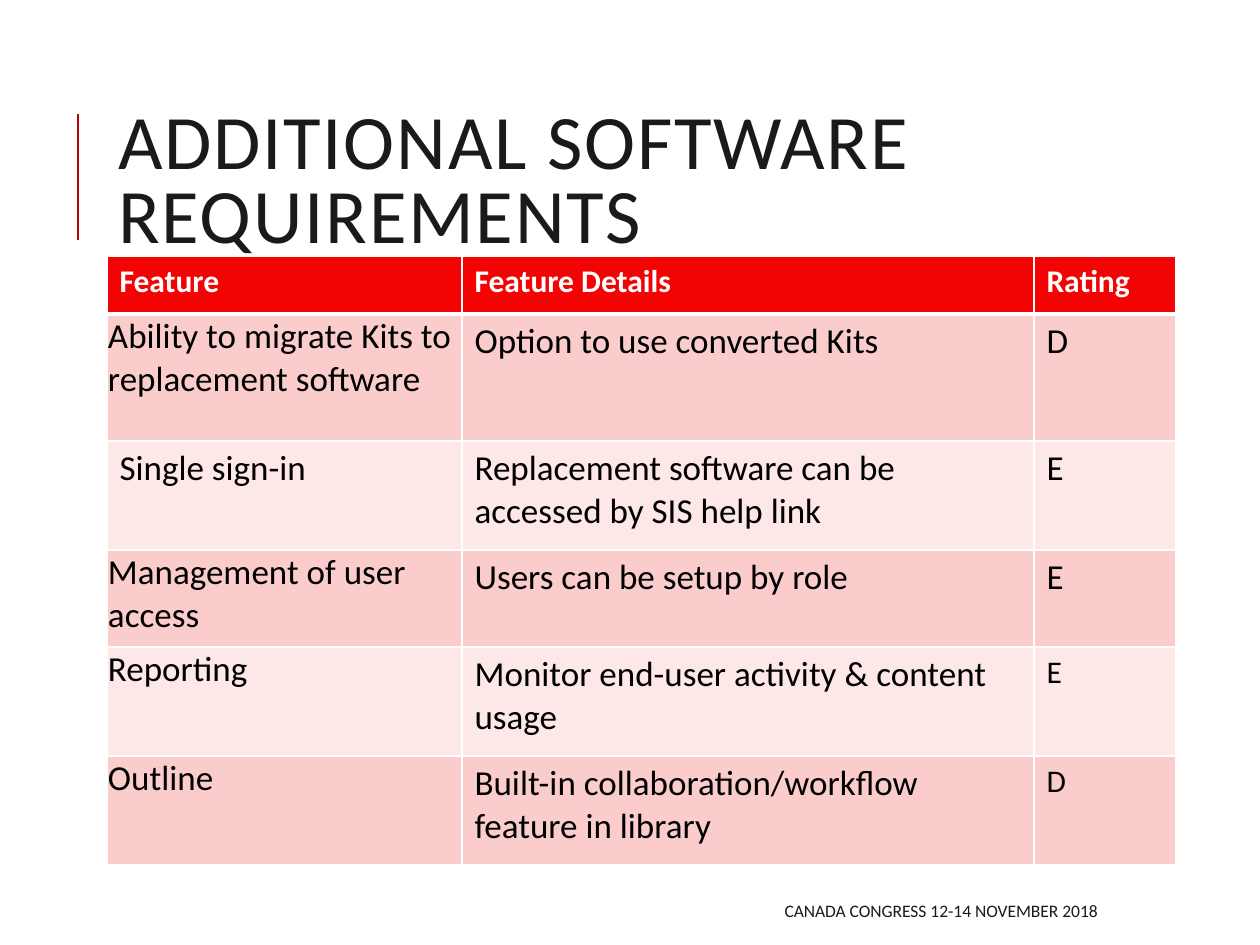
from lxml.etree import SubElement
from pptx import Presentation
from pptx.dml.color import RGBColor
from pptx.enum.shapes import MSO_CONNECTOR
from pptx.enum.text import MSO_ANCHOR, PP_ALIGN
from pptx.oxml.ns import qn
from pptx.util import Pt

THEME = {
    "font": "Calibri",
    "ink": "1A1A1A",
    "body": "000000",
    "white": "FFFFFF",
    "accent": "B40404",
    "header": "F30303",
    "bands": ("FACCCC", "FDE7E7"),
    "title_size": 44,
    "header_size": 18,
    "body_size": 20,
    "small_size": 18,
    "footer_size": 10,
}
SCALE = 914400 / 126


def px(*lengths):
    return [round(length * SCALE) for length in lengths]


def style(paragraph, size, color, bold=False):
    font = paragraph.font
    font.name = THEME["font"]
    font.size = Pt(size)
    font.bold = bold
    font.color.rgb = RGBColor.from_string(color)


presentation = Presentation()
presentation.slide_width, presentation.slide_height = px(1260, 945)
slide = presentation.slides.add_slide(presentation.slide_layouts[6])

accent = slide.shapes.add_connector(MSO_CONNECTOR.STRAIGHT, *px(78, 240, 78, 114))
accent.line.color.rgb = RGBColor.from_string(THEME["accent"])
accent.line.width = Pt(1.5)
SubElement(accent._element.spPr, qn("a:effectLst"))

title = slide.shapes.add_textbox(*px(106, 81, 1004, 207))
title.text_frame.word_wrap = True
title.text_frame.vertical_anchor = MSO_ANCHOR.MIDDLE
paragraph = title.text_frame.paragraphs[0]
paragraph.text = "ADDITIONAL SOFTWARE REQUIREMENTS"
paragraph.line_spacing = 0.8
style(paragraph, THEME["title_size"], THEME["ink"])
paragraph.runs[0].font._element.set("spc", "100")

rows = [
    ("Feature", "Feature Details", "Rating"),
    ("Ability to migrate Kits to replacement software", "Option to use converted Kits", "D"),
    ("Single sign-in", "Replacement software can be accessed by SIS help link", "E"),
    ("Management of user access", "Users can be setup by role", "E"),
    ("Reporting", "Monitor end-user activity & content usage", "E"),
    ("Outline", "Built-in collaboration/workflow feature in library", "D"),
]
column_widths = px(355, 572, 142)
row_heights = px(58, 127, 109, 97, 109, 109)
flush_rows = {1, 3, 4, 5}
small_rating_rows = {4, 5}

table = slide.shapes.add_table(len(rows), 3, *px(107, 256, 1069, 609)).table
for column, width in zip(table.columns, column_widths):
    column.width = width
for row, height in zip(table.rows, row_heights):
    row.height = height

for row_index, texts in enumerate(rows):
    is_header = row_index == 0
    fill = THEME["header"] if is_header else THEME["bands"][(row_index - 1) % 2]
    for column_index, text in enumerate(texts):
        cell = table.cell(row_index, column_index)
        cell.text = text
        paragraph = cell.text_frame.paragraphs[0]
        if is_header:
            style(paragraph, THEME["header_size"], THEME["white"], True)
        elif column_index == 2 and row_index in small_rating_rows:
            style(paragraph, THEME["small_size"], THEME["body"])
        else:
            style(paragraph, THEME["body_size"], THEME["body"])
        if column_index == 0 and row_index in flush_rows:
            cell.margin_left, cell.margin_top, cell.margin_right, cell.margin_bottom = px(1, 1, 1, 0)

        properties = cell._tc.get_or_add_tcPr()
        for side in ("L", "R", "T", "B"):
            thick = (is_header and side == "B") or (row_index == 1 and side == "T")
            border = SubElement(properties, qn(f"a:ln{side}"), w=str(Pt(3 if thick else 1)))
            border_fill = SubElement(border, qn("a:solidFill"))
            SubElement(border_fill, qn("a:srgbClr"), val=THEME["white"])
        cell.fill.solid()
        cell.fill.fore_color.rgb = RGBColor.from_string(fill)

footer = slide.shapes.add_textbox(*px(500, 892, 610, 38))
footer.text_frame.word_wrap = True
footer.text_frame.vertical_anchor = MSO_ANCHOR.MIDDLE
paragraph = footer.text_frame.paragraphs[0]
paragraph.text = "CANADA CONGRESS 12-14 NOVEMBER 2018"
paragraph.alignment = PP_ALIGN.RIGHT
style(paragraph, THEME["footer_size"], THEME["ink"])

presentation.save("out.pptx")
